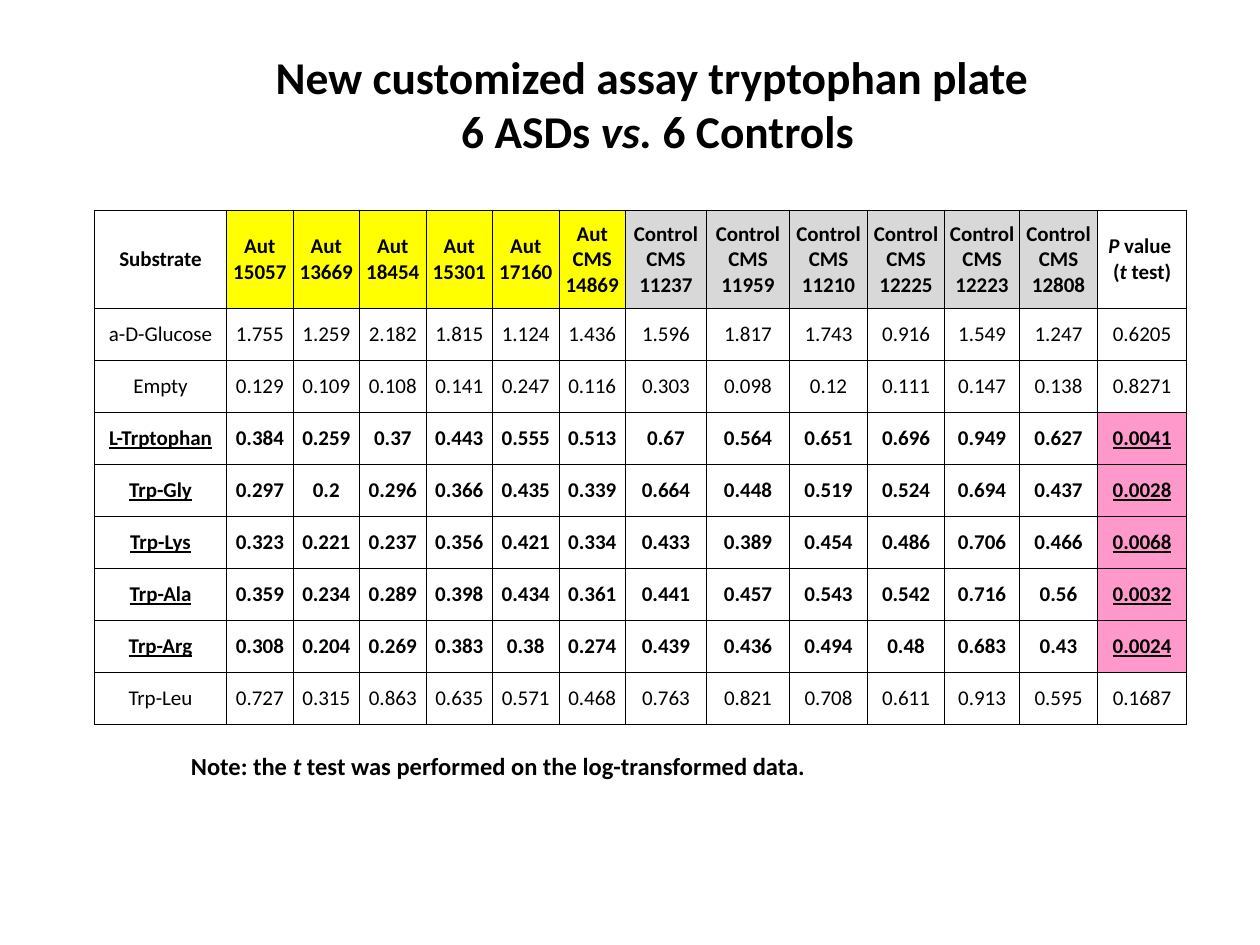
"""Build a slide comparing tryptophan plate readings of six ASD and six control samples."""
from lxml.etree import SubElement
from pptx import Presentation
from pptx.dml.color import RGBColor
from pptx.enum.text import MSO_ANCHOR, MSO_AUTO_SIZE, PP_ALIGN
from pptx.oxml.ns import qn
from pptx.util import Pt

COLORS = {"text": "000000", "autism": "FFFF00", "control": "D8D8D8", "significant": "FF99CC"}
CELL_FORMAT = {
    "vertical_anchor": MSO_ANCHOR.MIDDLE,
    "margin_left": Pt(0.72),
    "margin_right": Pt(0.72),
    "margin_top": Pt(0.72),
    "margin_bottom": Pt(0),
}
COL_WIDTHS = [75.5] + [38] * 6 + [46.3, 47.5, 44.6, 44, 42.9, 44.5, 51]
HEADER_HEIGHT, ROW_HEIGHT = 56, 29.75
HEADERS = (
    ["Substrate"]
    + [f"Aut {n}" for n in ("15057", "13669", "18454", "15301", "17160", "CMS 14869")]
    + [f"Control CMS {n}" for n in (11237, 11959, 11210, 12225, 12223, 12808)]
    + ["*P *value \n(*t* test)"]
)
READINGS = """\
a-D-Glucose 1.755 1.259 2.182 1.815 1.124 1.436 1.596 1.817 1.743 0.916 1.549 1.247 0.6205
Empty 0.129 0.109 0.108 0.141 0.247 0.116 0.303 0.098 0.12 0.111 0.147 0.138 0.8271
L-Trptophan 0.384 0.259 0.37 0.443 0.555 0.513 0.67 0.564 0.651 0.696 0.949 0.627 0.0041
Trp-Gly 0.297 0.2 0.296 0.366 0.435 0.339 0.664 0.448 0.519 0.524 0.694 0.437 0.0028
Trp-Lys 0.323 0.221 0.237 0.356 0.421 0.334 0.433 0.389 0.454 0.486 0.706 0.466 0.0068
Trp-Ala 0.359 0.234 0.289 0.398 0.434 0.361 0.441 0.457 0.543 0.542 0.716 0.56 0.0032
Trp-Arg 0.308 0.204 0.269 0.383 0.38 0.274 0.439 0.436 0.494 0.48 0.683 0.43 0.0024
Trp-Leu 0.727 0.315 0.863 0.635 0.571 0.468 0.763 0.821 0.708 0.611 0.913 0.595 0.1687"""


def write_text(tf, text, size, align, bold=True, underline=False):
    for i, line in enumerate(text.split("\n")):
        p = tf.paragraphs[0] if i == 0 else tf.add_paragraph()
        p.alignment = align
        for j, part in enumerate(line.split("*")):
            if not part:
                continue
            r = p.add_run()
            r.text = part
            fmt = {"name": "Calibri", "size": Pt(size), "bold": bold,
                   "italic": j % 2 == 1, "underline": underline}
            for key, value in fmt.items():
                setattr(r.font, key, value)
            r.font.color.rgb = RGBColor.from_string(COLORS["text"])


def add_borders(cell):
    tcPr = cell._tc.get_or_add_tcPr()
    for side in ("L", "R", "T", "B"):
        ln = SubElement(tcPr, qn(f"a:ln{side}"), w=str(Pt(0.5)))
        fill = SubElement(ln, qn("a:solidFill"))
        SubElement(fill, qn("a:srgbClr"), val=COLORS["text"])


def format_cell(cell, text, color=None, bold=True, underline=False):
    for key, value in CELL_FORMAT.items():
        setattr(cell, key, value)
    add_borders(cell)
    if color:
        cell.fill.solid()
        cell.fill.fore_color.rgb = RGBColor.from_string(COLORS[color])
    else:
        cell.fill.background()
    write_text(cell.text_frame, text, 12, PP_ALIGN.CENTER, bold, underline)


def add_readings_table(s):
    rows = [line.split() for line in READINGS.splitlines()]
    height = HEADER_HEIGHT + ROW_HEIGHT * len(rows)
    table = s.shapes.add_table(len(rows) + 1, len(HEADERS), Pt(54), Pt(120),
                               Pt(sum(COL_WIDTHS)), Pt(height)).table
    table.first_row = table.horz_banding = False
    for col, width in zip(table.columns, COL_WIDTHS):
        col.width = Pt(width)
    for i, row in enumerate(table.rows):
        row.height = Pt(ROW_HEIGHT if i else HEADER_HEIGHT)
    header_colors = [None] + ["autism"] * 6 + ["control"] * 6 + [None]
    for j, (text, color) in enumerate(zip(HEADERS, header_colors)):
        format_cell(table.cell(0, j), text, color)
    for i, values in enumerate(rows, 1):
        significant = float(values[-1]) < 0.05
        last = len(values) - 1
        for j, text in enumerate(values):
            color = "significant" if significant and j == last else None
            format_cell(table.cell(i, j), text, color, significant, significant and j in (0, last))


def add_title(s, text):
    sp = s.shapes.title
    sp.left, sp.top, sp.width, sp.height = Pt(143.3), Pt(23.8), Pt(465), Pt(70.6)
    tf = sp.text_frame
    tf.word_wrap = False
    tf.auto_size = MSO_AUTO_SIZE.SHAPE_TO_FIT_TEXT
    write_text(tf, text, 26, PP_ALIGN.CENTER)


def add_note(s, text):
    tf = s.shapes.add_textbox(Pt(102), Pt(425.5), Pt(378), Pt(24.5)).text_frame
    tf.word_wrap = True
    tf.auto_size = MSO_AUTO_SIZE.SHAPE_TO_FIT_TEXT
    write_text(tf, text, 14, PP_ALIGN.LEFT)


def main():
    prs = Presentation()
    prs.slide_width, prs.slide_height = Pt(720), Pt(540)
    s = prs.slides.add_slide(prs.slide_layouts[5])
    add_readings_table(s)
    add_title(s, "New customized assay tryptophan plate \n6 ASDs *vs. *6 Controls")
    add_note(s, "Note: the* t *test was performed on the log-transformed data.")
    prs.save("out.pptx")


if __name__ == "__main__":
    main()
